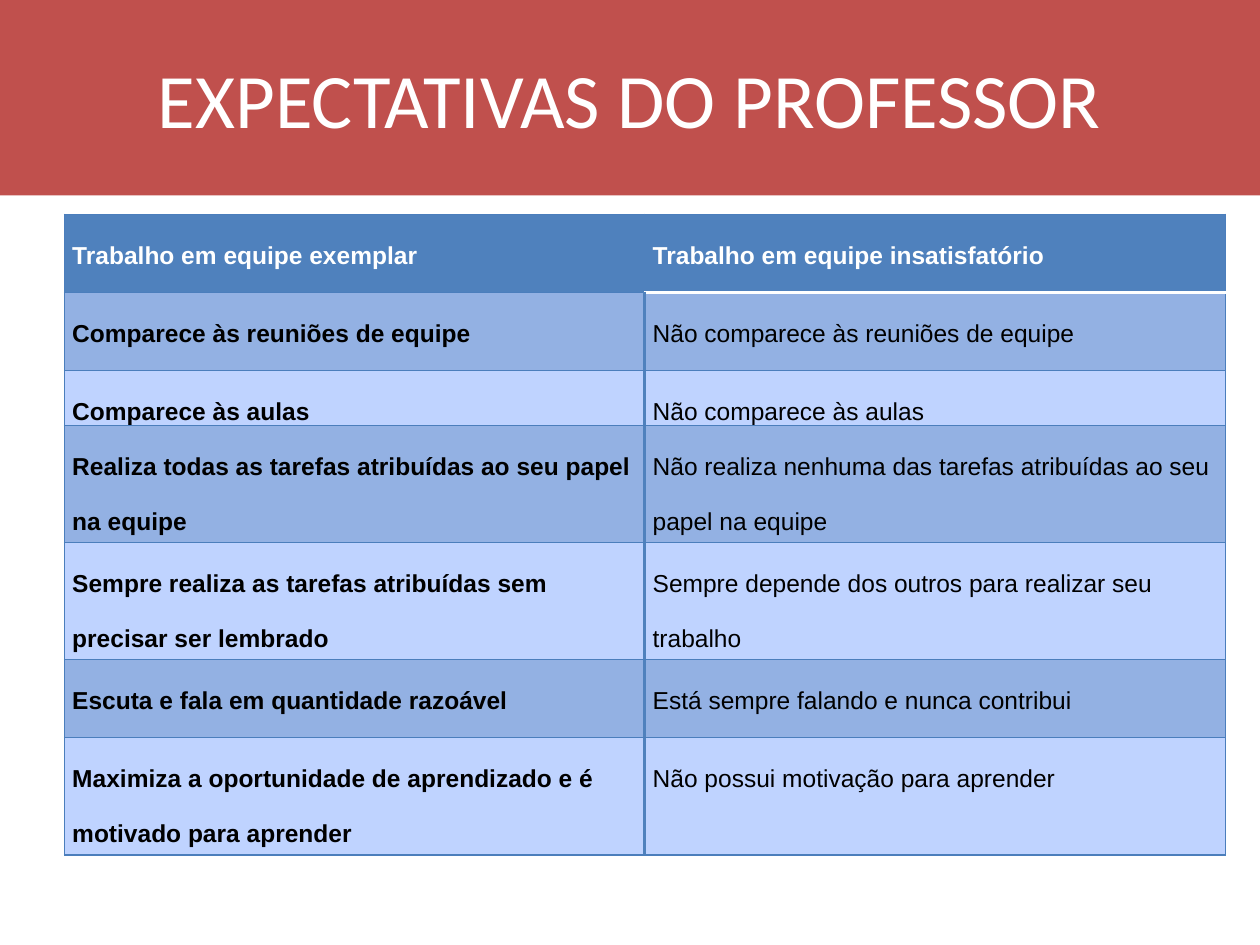
from pptx import Presentation
from pptx.dml.color import RGBColor
from pptx.enum.shapes import MSO_SHAPE as Shape
from pptx.enum.text import MSO_ANCHOR as Anchor, PP_ALIGN as Align
from pptx.oxml.ns import qn
from pptx.util import Pt
from lxml.etree import SubElement

RED, WHITE, BLACK = "C0504D", "FFFFFF", "000000"
BLUE, LINE_BLUE = "4F81BD", "4B7EBC"
DARK_BAND, LIGHT_BAND = "93B1E3", "BFD3FF"
THIN, THICK, WHITE_RULE = (LINE_BLUE, 0.75), (BLUE, 2), (WHITE, 2)

ROW_UNIT = 22.32
# Height in row units, exemplary teamwork, unsatisfactory teamwork
ROWS = [
    (2, "Trabalho em equipe exemplar", "Trabalho em equipe insatisfatório"),
    (2, "Comparece às reuniões de equipe", "Não comparece às reuniões de equipe"),
    (1, "Comparece às aulas", "Não comparece às aulas"),
    (3, "Realiza todas as tarefas atribuídas ao seu papel na equipe",
     "Não realiza nenhuma das tarefas atribuídas ao seu papel na equipe"),
    (3, "Sempre realiza as tarefas atribuídas sem precisar ser lembrado",
     "Sempre depende dos outros para realizar seu trabalho"),
    (2, "Escuta e fala em quantidade razoável", "Está sempre falando e nunca contribui"),
    (3, "Maximiza a oportunidade de aprendizado e é motivado para aprender",
     "Não possui motivação para aprender"),
]


def color(value):
    return RGBColor.from_string(value)


def paint(part, value):
    part.fill.solid()
    part.fill.fore_color.rgb = color(value)


def add_span(para, text, font, size, value, bold=False):
    span = para.add_run()
    span.text = text
    span.font.name, span.font.size, span.font.bold = font, Pt(size), bold
    span.font.color.rgb = color(value)


def set_borders(cell, **edges):
    props = cell._tc.get_or_add_tcPr()
    for side in "LRTB":
        value, width = edges.get(side, THIN)
        line = SubElement(props, qn(f"a:ln{side}"), w=str(Pt(width)))
        SubElement(SubElement(line, qn("a:solidFill")), qn("a:srgbClr"), val=value)


def add_title(page, left, top, width, height):
    box = page.shapes.add_shape(Shape.RECTANGLE, Pt(left), Pt(top), Pt(width), Pt(height))
    box.shadow.inherit = False
    paint(box, RED)
    box.line.fill.background()
    frame = box.text_frame
    frame.word_wrap, frame.vertical_anchor = True, Anchor.MIDDLE
    para = frame.paragraphs[0]
    para.alignment = Align.CENTER
    add_span(para, "EXPECTATIVAS DO PROFESSOR", "Calibri", 44, WHITE)


def fill_cell(cell, row, column, text):
    header, first = row == 0, column == 0
    # Borders: thick divider below the header, white rule under its right half
    edges = {}
    if header:
        edges["R" if first else "L"] = (BLUE, 0.75)
    else:
        edges["R" if first else "L"] = THICK
    if not first and row < 2:
        edges["B" if header else "T"] = WHITE_RULE
    set_borders(cell, **edges)
    paint(cell, BLUE if header else DARK_BAND if row % 2 else LIGHT_BAND)
    # Text
    cell.margin_left = cell.margin_right = Pt(4.5)
    cell.margin_top = cell.margin_bottom = 0
    para = cell.text_frame.paragraphs[0]
    para.line_spacing = 2.0
    add_span(para, text, "Arial", 14, WHITE if header else BLACK, header or first)


def add_comparison(page, left, top, width):
    height = ROW_UNIT * sum(units for units, *_ in ROWS)
    table = page.shapes.add_table(len(ROWS), 2, Pt(left), Pt(top), Pt(width), Pt(height)).table
    for column in table.columns:
        column.width = Pt(width / 2)
    for row, (units, *texts) in enumerate(ROWS):
        table.rows[row].height = Pt(units * ROW_UNIT)
        for column, text in enumerate(texts):
            fill_cell(table.cell(row, column), row, column, text)


def main():
    deck = Presentation()
    deck.slide_width, deck.slide_height = Pt(720), Pt(540)
    page = deck.slides.add_slide(deck.slide_layouts[6])
    add_title(page, 0, 0, 720, 111.6)
    add_comparison(page, 36.8, 122.4, 663.4)
    deck.save("out.pptx")


if __name__ == "__main__":
    main()
